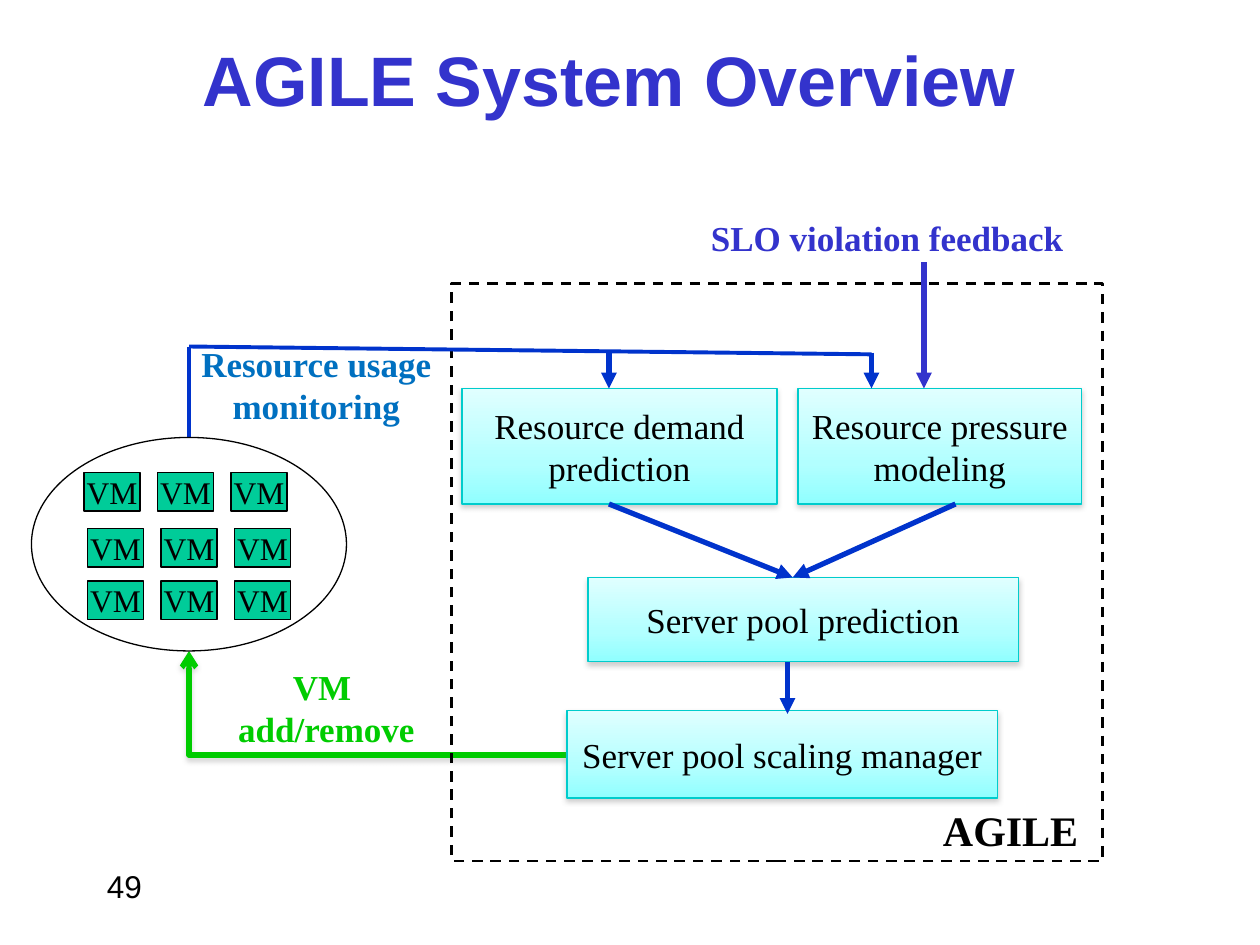
from lxml import etree
from pptx import Presentation
from pptx.dml.color import RGBColor
from pptx.enum.dml import MSO_LINE
from pptx.enum.shapes import MSO_CONNECTOR, MSO_SHAPE
from pptx.enum.text import MSO_ANCHOR, MSO_AUTO_SIZE, PP_ALIGN
from pptx.oxml.ns import qn
from pptx.util import Pt

RECT, OVAL = MSO_SHAPE.RECTANGLE, MSO_SHAPE.OVAL
LINE, ELBOW = MSO_CONNECTOR.STRAIGHT, MSO_CONNECTOR.ELBOW
DASH = MSO_LINE.DASH
TOP, MID = MSO_ANCHOR.TOP, MSO_ANCHOR.MIDDLE
LEFT, MIDDLE = PP_ALIGN.LEFT, PP_ALIGN.CENTER
NONE, GROW = MSO_AUTO_SIZE.NONE, MSO_AUTO_SIZE.SHAPE_TO_FIT_TEXT

SERIF, SANS = "Times New Roman", "Arial"
BLACK, WHITE = "000000", "FFFFFF"
INDIGO, BLUE, SKY = "3333CC", "0033CC", "0070C0"
GREEN, TEAL, CYAN = "00CC00", "00CC99", "00CCCC"
STOPS = ((0, "E0FFFF"), (65, "B2FFFF"), (100, "90FFFF"))


def paint(code):
    return RGBColor.from_string(code)


def apply(item, values):
    for name, value in values.items():
        setattr(item, name, value)


def node(parent, tag, **values):
    return etree.SubElement(parent, qn(tag), values)


def shade(effects, alpha, gap):
    cast = node(effects, "a:outerShdw", blurRad=str(Pt(3.1)),
                dist=str(Pt(gap)), dir="5400000", rotWithShape="0")
    tone = node(cast, "a:srgbClr", val="808080")
    node(tone, "a:alpha", val=str(alpha * 1000))


def write(shape, lines, size=20, color=BLACK, font=SERIF, bold=False,
          align=MIDDLE, before=0, **frame):
    text = shape.text_frame
    apply(text, {"word_wrap": True, "auto_size": NONE, **frame})
    text.text = lines
    for para in text.paragraphs:
        apply(para, {"alignment": align, "space_before": Pt(before)})
        for run in para.runs:
            apply(run.font, {"name": font, "size": Pt(size), "bold": bold})
            run.font.color.rgb = paint(color)


def label(slide, box, lines, **style):
    shape = slide.shapes.add_textbox(*map(Pt, box))
    write(shape, lines, **{"vertical_anchor": TOP, "auto_size": GROW,
                           "bold": True, **style})


def block(slide, kind, box, fill=None, line=BLACK, width=0.75):
    shape = slide.shapes.add_shape(kind, *map(Pt, box))
    shape.shadow.inherit = False
    if fill:
        shape.fill.solid()
        shape.fill.fore_color.rgb = paint(fill)
    else:
        shape.fill.background()
    shape.line.color.rgb = paint(line)
    shape.line.width = Pt(width)
    return shape


def stage(slide, box, name):
    shape = block(slide, RECT, box, line=CYAN)
    shape.fill.gradient()
    shape.fill.gradient_angle = 270
    props = shape._element.spPr
    stops = props.find(".//" + qn("a:gsLst"))
    stops.clear()
    for spot, code in STOPS:
        stop = node(stops, "a:gs", pos=str(spot * 1000))
        node(stop, "a:srgbClr", val=code)
    shade(props.find(qn("a:effectLst")), 38, 1.6)
    write(shape, name, before=4, vertical_anchor=MID)


def link(slide, start, end, color=BLUE, width=3, head="triangle", kind=LINE):
    wire = slide.shapes.add_connector(kind, *map(Pt, (*start, *end)))
    wire.line.color.rgb = paint(color)
    wire.line.width = Pt(width)
    props = wire._element.spPr
    if head:
        node(props.find(qn("a:ln")), "a:tailEnd", type=head)
    return props, node(props, "a:effectLst")


def heading(slide, box):
    title = slide.shapes.title
    apply(title, dict(zip(("left", "top", "width", "height"), map(Pt, box))))
    write(title, "AGILE System Overview", size=40, color=INDIGO, font=SANS,
          bold=True, vertical_anchor=MID)


def scaling(slide, box):
    x, y, w, h = box
    props, effects = link(slide, (x, y), (x + w, y + h), GREEN,
                          head="arrow", kind=ELBOW)
    props.find(qn("a:xfrm")).set("rot", "10800000")
    props.find(qn("a:prstGeom")).set("prst", "bentConnector2")
    shade(effects, 35, 1.8)
    label(slide, (x - 18, y + 4.5, 193, 55), "VM \nadd/remove", color=GREEN)


def monitor(slide, box):
    x, y, w, h = box
    link(slide, (x, y), (x, y + h), width=2.25, head=None)
    link(slide, (x, y), (x + w, y + 4.5), width=2.25, head=None)
    for drop in (x + 240, x + w):
        link(slide, (drop, y + 3.5), (drop, y + 24))
    label(slide, (x - 16.5, y - 6, 178.5, 55.5),
          "Resource usage monitoring", color=SKY)


def engine(slide, box):
    x, y, w, h = box
    stages = (
        ("Resource demand prediction", 6, 60, 180, 66),
        ("Resource pressure modeling", 198, 60, 162, 66),
        ("Server pool prediction", 78, 168, 246, 48),
        ("Server pool scaling manager", 66, 244, 246, 50),
    )
    for name, left, top, wide, high in stages:
        stage(slide, (x + left, y + top, wide, high), name)
    frame = block(slide, RECT, box, width=1.5)
    frame.line.dash_style = DASH
    label(slide, (x + w - 105, y + h - 36, 105, 36), "AGILE", size=24)
    flows = ((288, 126, 195, 168), (90, 126, 195, 168), (192, 216, 192, 246))
    for left, top, right, base in flows:
        link(slide, (x + left, y + top), (x + right, y + base))
    label(slide, (x + 120, y - 42, 258, 31), "SLO violation feedback",
          color=INDIGO)
    link(slide, (x + 270, y - 12), (x + 270, y + 60), INDIGO)


def pool(slide, box):
    x, y, _, _ = box
    block(slide, OVAL, box, WHITE)
    for left, top in ((30, 20), (32, 52), (32, 82)):
        for col in range(3):
            cell = (x + left + 42 * col, y + top, 32, 22)
            write(block(slide, RECT, cell, TEAL), "VM", size=18,
                  word_wrap=False, vertical_anchor=MID)


def main():
    deck = Presentation()
    apply(deck, {"slide_width": Pt(720), "slide_height": Pt(540)})
    slide = deck.slides.add_slide(deck.slide_layouts[5])
    heading(slide, (42, 0, 612, 90))
    scaling(slide, (108, 372, 216, 59.5))
    engine(slide, (258, 162, 372, 330))
    monitor(slide, (108, 198, 390, 52))
    pool(slide, (18, 250, 180, 122))
    label(slide, (54, 492, 150, 36), "49", size=18, font=SANS, bold=False,
          align=LEFT, auto_size=NONE)
    deck.save("out.pptx")


if __name__ == "__main__":
    main()
